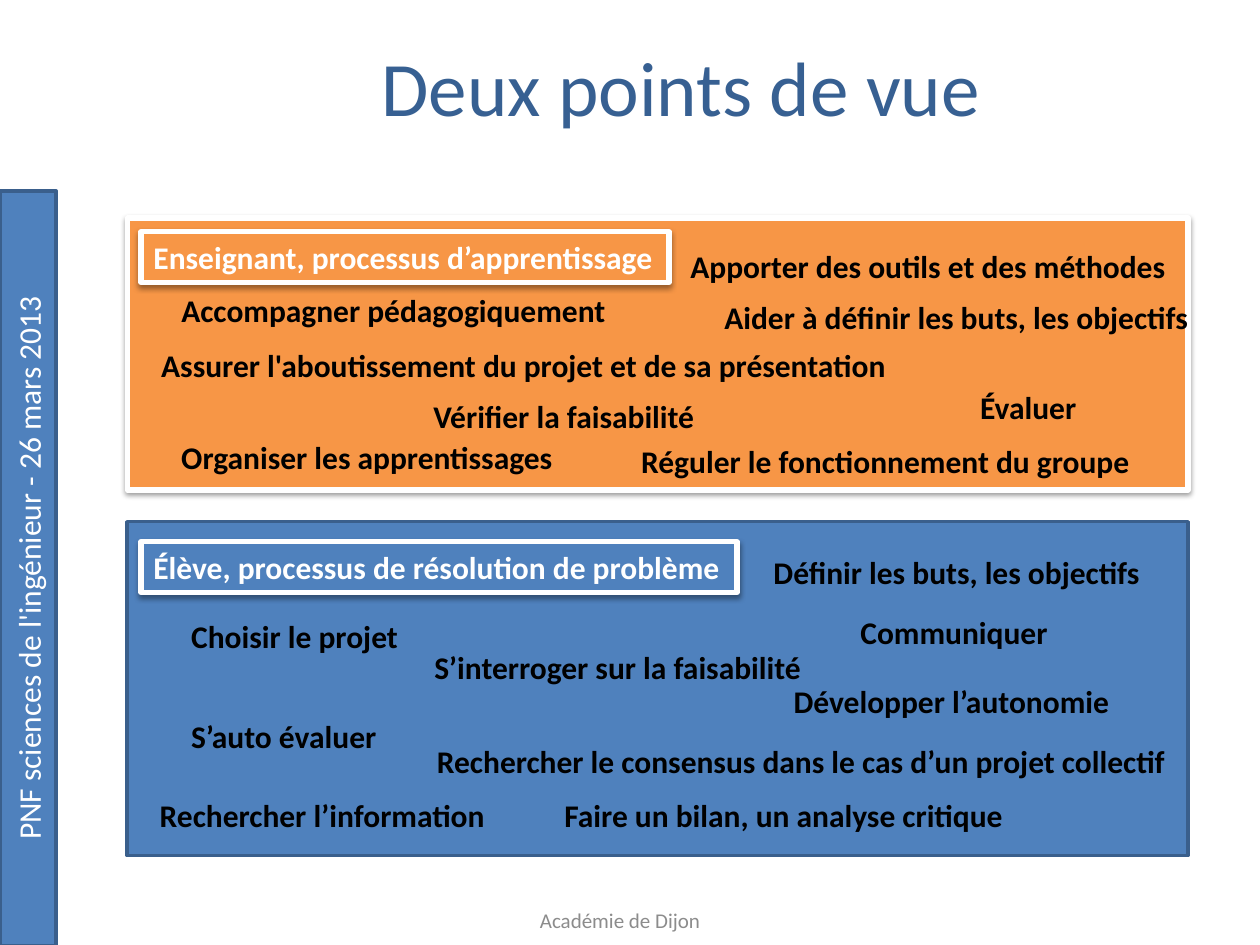
from dataclasses import dataclass

from lxml.etree import SubElement
from pptx import Presentation
from pptx.dml.color import RGBColor
from pptx.enum.shapes import MSO_SHAPE as Shape
from pptx.enum.text import MSO_ANCHOR as Anchor, MSO_AUTO_SIZE as AutoSize, PP_ALIGN as Align
from pptx.oxml.ns import qn
from pptx.util import Pt


@dataclass(frozen=True)
class Theme:
    font: str = "Calibri"
    white: str = "FFFFFF"
    black: str = "000000"
    grey: str = "8C8C8C"
    orange: str = "F79646"
    blue: str = "4F81BD"
    outline: str = "3A5F8C"
    title: str = "376092"
    title_size: int = 44
    body_size: int = 18
    footer_size: int = 12


class SlideBuilder:
    def __init__(self, slide, theme):
        self.slide = slide
        self.theme = theme

    def set_text(self, shape, text, color, size, bold=False, align=Align.LEFT, anchor=Anchor.TOP, wrap=True):
        frame = shape.text_frame
        frame.text = text
        frame.word_wrap = wrap
        frame.auto_size = AutoSize.NONE if wrap else AutoSize.SHAPE_TO_FIT_TEXT
        frame.vertical_anchor = anchor
        paragraph = frame.paragraphs[0]
        paragraph.alignment = align
        font = paragraph.runs[0].font
        font.name = self.theme.font
        font.size = Pt(size)
        font.bold = bold
        font.color.rgb = RGBColor.from_string(color)

    def title(self, text, left, top, width, height):
        shape = self.slide.shapes.title
        shape.left, shape.top, shape.width, shape.height = map(Pt, (left, top, width, height))
        self.set_text(shape, text, self.theme.title, self.theme.title_size, align=Align.CENTER)

    def rectangle(self, left, top, width, height, fill, line, weight):
        shape = self.slide.shapes.add_shape(Shape.RECTANGLE, *map(Pt, (left, top, width, height)))
        shape.shadow.inherit = False
        shape.fill.solid()
        shape.fill.fore_color.rgb = RGBColor.from_string(fill)
        shape.line.color.rgb = RGBColor.from_string(line)
        shape.line.width = Pt(weight)
        return shape

    def add_shadow(self, shape):
        effects = shape.element.spPr.find(qn("a:effectLst"))
        shadow = SubElement(effects, qn("a:outerShdw"), blurRad=str(Pt(3.1)), dist=str(Pt(1.6)),
                            dir="5400000", rotWithShape="0")
        color = SubElement(shadow, qn("a:srgbClr"), val=self.theme.black)
        SubElement(color, qn("a:alpha"), val="38000")

    def panel(self, top, height, fill, line, weight, shadow=False):
        shape = self.rectangle(72.7, top, 606.2, height, fill, line, weight)
        if shadow:
            self.add_shadow(shape)

    def heading(self, text, top, width, fill):
        shape = self.rectangle(80.6, top, width, 29, fill, self.theme.white, 3)
        self.add_shadow(shape)
        self.set_text(shape, text, self.theme.white, self.theme.body_size, bold=True, wrap=False)

    def label(self, text, left, top, width):
        shape = self.slide.shapes.add_textbox(*map(Pt, (left, top, width, 29)))
        self.set_text(shape, text, self.theme.black, self.theme.body_size, bold=True, wrap=False)

    def sidebar(self, text, center_x, center_y, length, thickness):
        shape = self.rectangle(center_x - length / 2, center_y - thickness / 2, length, thickness,
                               self.theme.blue, self.theme.outline, 2)
        shape.rotation = 270
        self.set_text(shape, text, self.theme.white, self.theme.body_size,
                      align=Align.CENTER, anchor=Anchor.MIDDLE)

    def footer(self, text, left, top, width, height):
        shape = self.slide.shapes.add_textbox(*map(Pt, (left, top, width, height)))
        self.set_text(shape, text, self.theme.grey, self.theme.footer_size,
                      align=Align.CENTER, anchor=Anchor.MIDDLE)


TEACHER_LABELS = [
    ("Apporter des outils et des méthodes", 387.4, 137.5, 288),
    ("Accompagner pédagogiquement", 96.5, 162.7, 258.5),
    ("Aider à définir les buts, les objectifs", 406.8, 167, 282.2),
    ("Assurer l'aboutissement du projet et de sa présentation", 85, 194.4, 432.7),
    ("Évaluer", 553, 218.2, 69.8),
    ("Vérifier la faisabilité", 240.5, 223.2, 164.9),
    ("Organiser les apprentissages", 96.5, 247, 228.2),
    ("Réguler le fonctionnement du groupe", 359.3, 249.1, 295.9),
]
STUDENT_LABELS = [
    ("Définir les buts, les objectifs", 434.9, 312.5, 226.1),
    ("Communiquer", 484.6, 347, 122.4),
    ("Choisir le projet", 102.2, 349.2, 133.2),
    ("S’interroger sur la faisabilité", 241.2, 366.5, 225.4),
    ("Développer l’autonomie", 446.4, 385.9, 196.6),
    ("S’auto évaluer", 102.2, 406.1, 121),
    ("Rechercher le consensus dans le cas d’un projet collectif", 242.6, 420.5, 434.2),
    ("Rechercher l’information", 84.2, 451.4, 201.6),
    ("Faire un bilan, un analyse critique", 315.4, 451.4, 267.1),
]


def main():
    presentation = Presentation()
    presentation.slide_width, presentation.slide_height = Pt(720), Pt(540)
    theme = Theme()
    builder = SlideBuilder(presentation.slides.add_slide(presentation.slide_layouts[5]), theme)

    builder.sidebar("PNF sciences de l'ingénieur - 26 mars 2013", 16.2, 324.7, 431.3, 31.7)
    builder.title("Deux points de vue", 97.2, 18.7, 583.9, 90)
    builder.footer("Académie de Dijon", 218.2, 511.2, 272.2, 28.8)
    builder.panel(124.6, 155.5, theme.orange, theme.white, 3, shadow=True)
    builder.panel(298.1, 190.8, theme.blue, theme.outline, 2)
    builder.heading("Enseignant, processus d’apprentissage", 132.5, 301.7, theme.orange)
    builder.heading("Élève, processus de résolution de problème", 309.6, 340.6, theme.blue)
    for label in TEACHER_LABELS + STUDENT_LABELS:
        builder.label(*label)

    presentation.save("out.pptx")


if __name__ == "__main__":
    main()
